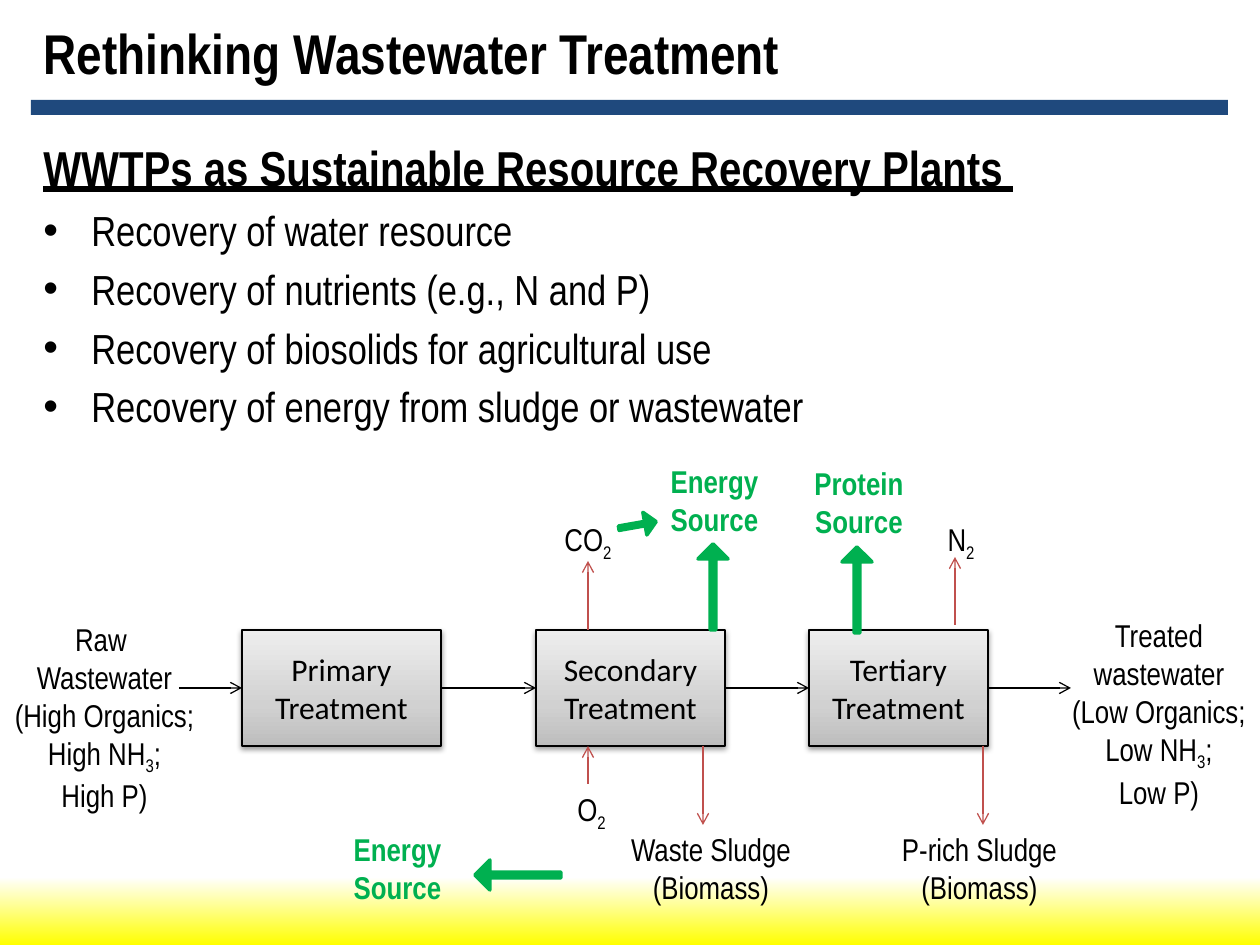
import copy
import lxml.etree
import pptx
import pptx.dml.color
import pptx.enum.dml
import pptx.enum.shapes
import pptx.enum.text
import pptx.oxml
import pptx.oxml.ns
import pptx.util

PX = 914400 // 126
NARROW = "Arial Narrow"
BLACK, GREEN, RED, NAVY = "000000", "00B050", "C0504D", "1F497D"
ALIGN = pptx.enum.text.PP_ALIGN
ANCHOR = pptx.enum.text.MSO_ANCHOR
PRESET = pptx.enum.shapes.MSO_SHAPE
qn = pptx.oxml.ns.qn


def px(*lengths):
    return [pptx.util.Emu(length * PX) for length in lengths]


def color(hex_string):
    return pptx.dml.color.RGBColor.from_string(hex_string)


def add_xml(parent, tag, **attributes):
    element = lxml.etree.SubElement(parent, qn(tag))
    for name, value in attributes.items():
        element.set(name, str(value))
    return element


def format_font(font, size, name=NARROW, hex_string=BLACK, bold=False):
    font.size = pptx.util.Pt(size)
    font.name = name
    font.bold = bold
    font.color.rgb = color(hex_string)


def write_lines(frame, lines, name=NARROW, hex_string=BLACK, bold=False):
    """Centre the lines; text between underscores becomes subscript."""
    for index, line in enumerate(lines):
        paragraph = frame.paragraphs[0] if index == 0 else frame.add_paragraph()
        paragraph.alignment = ALIGN.CENTER
        for part_index, part in enumerate(line.split("_")):
            if not part:
                continue
            run = paragraph.add_run()
            run.text = part
            format_font(run.font, 18, name, hex_string, bold)
            if part_index % 2:
                run.font._element.set("baseline", "-25000")


def add_label(slide, box, lines, hex_string=BLACK, bold=False):
    frame = slide.shapes.add_textbox(*px(*box)).text_frame
    frame.word_wrap = False
    write_lines(frame, lines, hex_string=hex_string, bold=bold)


def add_gradient(shape, stops, angle):
    """Fill with (position in %, colour) stops; the angle runs counter-clockwise."""
    shape.fill.gradient()
    shape.fill.gradient_angle = angle
    stop_list = shape._element.spPr.find(qn("a:gradFill")).find(qn("a:gsLst"))
    while len(stop_list) < len(stops):
        stop_list.append(copy.deepcopy(stop_list[0]))
    for stop, element, (position, hex_string) in zip(
            shape.fill.gradient_stops, stop_list, stops):
        stop.color.rgb = color(hex_string)
        element.set("pos", str(position * 1000))


def add_backdrop(slide):
    band = slide.shapes.add_shape(PRESET.RECTANGLE, *px(0, 877, 1260, 68))
    add_gradient(band, [(0, "FFFFFF"), (100, "FFFF00")], 270)
    rule = slide.shapes.add_shape(PRESET.RECTANGLE, *px(31, 100, 1197, 15))
    rule.fill.solid()
    rule.fill.fore_color.rgb = color(NAVY)
    for shape in (band, rule):
        shape.line.fill.background()
        shape.shadow.inherit = False


def set_title(slide, box, text):
    title = slide.shapes.title
    title.left, title.top, title.width, title.height = px(*box)
    frame = title.text_frame
    frame.text = text
    frame.auto_size = pptx.enum.text.MSO_AUTO_SIZE.NONE
    frame.vertical_anchor = ANCHOR.MIDDLE
    frame.paragraphs[0].alignment = ALIGN.LEFT
    format_font(frame.paragraphs[0].runs[0].font, 32, bold=True)


def add_body(slide, box, heading, bullets):
    frame = slide.shapes.add_textbox(*px(*box)).text_frame
    frame.word_wrap = True
    frame.text = "\n".join([heading, *bullets])
    for index, paragraph in enumerate(frame.paragraphs):
        size = 24 if index else 28
        paragraph.space_before = pptx.util.Pt(size * 0.2)
        font = paragraph.runs[0].font
        format_font(font, size, bold=index == 0)
        font.underline = index == 0
        if index:
            properties = paragraph._p.get_or_add_pPr()
            indent = pptx.util.Inches(0.38)
            properties.set("marL", str(indent))
            properties.set("indent", str(-indent))
            add_xml(properties, "a:buFont", typeface="Arial")
            add_xml(properties, "a:buChar", char="•")


def add_stage(slide, box, name):
    stage = slide.shapes.add_shape(PRESET.RECTANGLE, *px(*box))
    add_gradient(stage, [(0, "BDBDBD"), (35, "D1D1D1"), (100, "EEEEEE")], 90)
    stage.line.color.rgb = color(BLACK)
    stage.line.width = pptx.util.Pt(0.75)
    effects = add_xml(stage._element.spPr, "a:effectLst")
    shadow = add_xml(effects, "a:outerShdw", blurRad=40000, dist=20000,
                     dir=5400000, rotWithShape=0)
    add_xml(add_xml(shadow, "a:srgbClr", val=BLACK), "a:alpha", val=38000)
    stage.text_frame.vertical_anchor = ANCHOR.MIDDLE
    write_lines(stage.text_frame, [name, "Treatment"], name="Calibri")
    return stage


def add_flow(slide, start, end, hex_string=BLACK, source=None, target=None):
    line = slide.shapes.add_connector(
        pptx.enum.shapes.MSO_CONNECTOR.STRAIGHT, *px(*start, *end))
    line.line.color.rgb = color(hex_string)
    line.line.width = pptx.util.Pt(0.75)
    add_xml(line.line._get_or_add_ln(), "a:tailEnd", type="arrow")
    add_xml(line._element.spPr, "a:effectLst")
    if source is not None:
        line.begin_connect(source, 3)
    if target is not None:
        line.end_connect(target, 1)


def add_block_arrow(slide, box, rotation=0):
    arrow = slide.shapes.add_shape(PRESET.UP_ARROW, *px(*box))
    arrow.adjustments[0] = 0.19
    arrow.rotation = rotation
    arrow.fill.solid()
    arrow.fill.fore_color.rgb = color(GREEN)
    arrow.line.color.rgb = color(GREEN)
    arrow.line.width = pptx.util.Pt(2)
    arrow.shadow.inherit = False


def add_process(slide, left, top):
    """Place the treatment train; left and top are the corner of the first stage."""
    height = 116
    middle, bottom = top + height // 2, top + height
    stages = [add_stage(slide, (left + offset, top, width, height), name)
              for offset, width, name in [(0, 199, "Primary"), (294, 189, "Secondary"),
                                          (567, 179, "Tertiary")]]
    ends = [(left - 63, left), (left + 199, left + 294),
            (left + 483, left + 567), (left + 746, left + 829)]
    for (start, end), source, target in zip(ends, [None, *stages], [*stages, None]):
        add_flow(slide, (start, middle), (end, middle), source=source, target=target)

    for offset, start, end in [(346, top, top - 69), (346, bottom + 38, bottom),
                               (461, bottom, bottom + 79), (713, top - 5, top - 73),
                               (741, bottom, bottom + 79)]:
        add_flow(slide, (left + offset, start), (left + offset, end), RED)

    for box, lines in [
        ((-241, -16, 207, 204),
         ["Raw ", "Wastewater", "(High Organics;", "High NH_3_;", "High P)"]),
        ((816, -20, 202, 204),
         ["Treated", "wastewater", "(Low Organics;", "Low NH_3_;", "Low P)"]),
        ((309, -116, 74, 50), ["CO_2_"]),
        ((322, 154, 55, 50), ["O_2_"]),
        ((692, -116, 54, 50), ["N_2_"]),
        ((375, 194, 188, 89), ["Waste Sludge", "(Biomass)"]),
        ((646, 194, 183, 89), ["P-rich Sludge", "(Biomass)"]),
    ]:
        add_label(slide, (left + box[0], top + box[1], *box[2:]), lines)

    for x, y, width, name in [(416, -174, 113, "Energy"), (559, -172, 116, "Protein"),
                              (99, 194, 113, "Energy")]:
        add_label(slide, (left + x, top + y, width, 89), [name, "Source"], GREEN, True)
    for x, y, width, length, rotation in [(456, -86, 30, 86, 0), (384, -124, 23, 38, 80),
                                          (600, -83, 30, 86, 0), (261, 202, 30, 86, 270)]:
        add_block_arrow(slide, (left + x, top + y, width, length), rotation)


def main():
    presentation = pptx.Presentation()
    presentation.slide_width, presentation.slide_height = px(1260, 945)
    slide = presentation.slides.add_slide(presentation.slide_layouts[5])
    add_backdrop(slide)
    set_title(slide, (31, 21, 1197, 63), "Rethinking Wastewater Treatment")
    add_body(slide, (31, 131, 1207, 741), "WWTPs as Sustainable Resource Recovery Plants ", [
        "Recovery of water resource",
        "Recovery of nutrients (e.g., N and P)",
        "Recovery of biosolids for agricultural use",
        "Recovery of energy from sludge or wastewater",
    ])
    add_process(slide, 242, 630)
    presentation.save("out.pptx")


if __name__ == "__main__":
    main()
